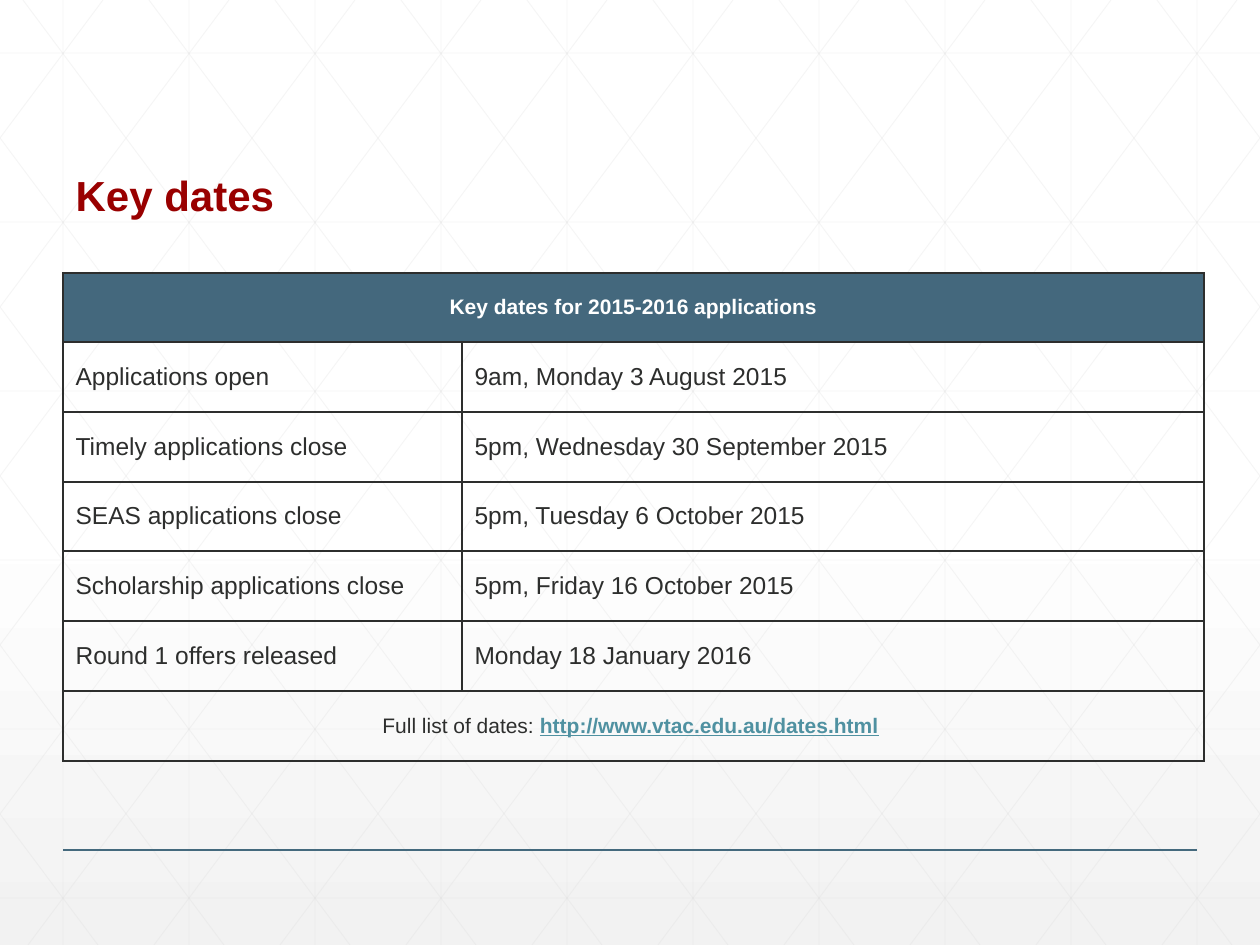
from dataclasses import dataclass

from lxml import etree
from pptx import Presentation
from pptx.dml.color import RGBColor
from pptx.enum.shapes import MSO_CONNECTOR
from pptx.enum.text import MSO_ANCHOR, MSO_AUTO_SIZE, PP_ALIGN
from pptx.oxml.ns import qn
from pptx.util import Emu, Pt

STRAIGHT = MSO_CONNECTOR.STRAIGHT
MIDDLE, BOTTOM = MSO_ANCHOR.MIDDLE, MSO_ANCHOR.BOTTOM
LEFT, CENTER = PP_ALIGN.LEFT, PP_ALIGN.CENTER
NO_FIT = MSO_AUTO_SIZE.NONE

SCALE = 914400 / 126
W, H = 1260, 945
FONT = "Arial"
COLORS = {
    "white": "FFFFFF",
    "fade": "F2F2F2",
    "grid": "D9D9D9",
    "title": "990000",
    "header": "44687D",
    "rule": "44697D",
    "text": "2D2E2D",
    "link": "4F91A1",
}

GRID_STEP, GRID_LEFT, GRID_TOP, GRID_ROW = 126, 63, 53, 169
DIAGONAL_START, DIAGONAL_RUN = 23, 705

TABLE_BOX = (63, 273, 1141, 488)
COL_WIDTHS = (399, 742)
HEADING = "Key dates for 2015-2016 applications"


@dataclass
class KeyDate:
    event: str
    when: str


@dataclass
class Line:
    x1: int
    y1: int
    x2: int
    y2: int


KEY_DATES = [
    KeyDate("Applications open", "9am, Monday 3 August 2015"),
    KeyDate("Timely applications close", "5pm, Wednesday 30 September 2015"),
    KeyDate("SEAS applications close", "5pm, Tuesday 6 October 2015"),
    KeyDate("Scholarship applications close", "5pm, Friday 16 October 2015"),
    KeyDate("Round 1 offers released", "Monday 18 January 2016"),
]


def px(n: int) -> Emu:
    return Emu(round(n * SCALE))


def rgb(name: str) -> RGBColor:
    return RGBColor.from_string(COLORS[name])


def add_text(p, text: str, *, size: int = 14, color: str = "text",
             bold: bool = False, underline: bool = False, align=LEFT) -> None:
    p.alignment = align
    r = p.add_run()
    r.text = text
    r.font.name = FONT
    r.font.size = Pt(size)
    r.font.bold = bold
    r.font.underline = underline
    r.font.color.rgb = rgb(color)


def add_line(s, line: Line, color: str, width: float, alpha: int = 100) -> None:
    sp = s.shapes.add_connector(
        STRAIGHT, px(line.x1), px(line.y1), px(line.x2), px(line.y2))
    sp.line.color.rgb = rgb(color)
    sp.line.width = Pt(width)
    if alpha < 100:
        clr = sp._element.spPr.find(".//" + qn("a:srgbClr"))
        etree.SubElement(clr, qn("a:alpha"), val=str(alpha * 1000))
    etree.SubElement(sp._element.spPr, qn("a:effectLst"))


def grid_lines() -> list[Line]:
    lines = [Line(x, 0, x, H) for x in range(GRID_LEFT, W, GRID_STEP)]
    lines += [Line(0, y, W, y) for y in range(GRID_TOP, H, GRID_ROW)]
    slope = H / DIAGONAL_RUN
    for i in range(-5, 10):
        start = DIAGONAL_START + i * GRID_STEP
        x1, x2 = max(start, 0), min(start + DIAGONAL_RUN, W)
        y1, y2 = (round((x - start) * slope) for x in (x1, x2))
        lines += [Line(x1, y1, x2, y2), Line(W - x1, y1, W - x2, y2)]
    return lines


def set_background(s) -> None:
    fill = s.background.fill
    fill.gradient()
    fill.gradient_angle = 270
    stops = ((0.53, "white"), (1, "fade"))
    for stop, (position, color) in zip(fill.gradient_stops, stops):
        stop.position = position
        stop.color.rgb = rgb(color)


def add_title(s, text: str) -> None:
    sp = s.shapes.title
    sp.left, sp.top, sp.width, sp.height = map(px, (63, 69, 1134, 158))
    tf = sp.text_frame
    tf.auto_size = NO_FIT
    tf.word_wrap = True
    tf.vertical_anchor = BOTTOM
    p = tf.paragraphs[0]
    p.line_spacing = 0.9
    add_text(p, text, size=24, color="title", bold=True)
    s.shapes._spTree.append(sp._element)


def format_cell(cell) -> None:
    cell.vertical_anchor = MIDDLE
    tcPr = cell._tc.get_or_add_tcPr()
    for side in ("a:lnL", "a:lnR", "a:lnT", "a:lnB"):
        ln = etree.SubElement(tcPr, qn(side), w=str(Pt(1)))
        solid = etree.SubElement(ln, qn("a:solidFill"))
        etree.SubElement(solid, qn("a:srgbClr"), val=COLORS["text"])
    cell.fill.background()


def add_dates_table(s) -> None:
    n = len(KEY_DATES) + 2
    table = s.shapes.add_table(n, 2, *map(px, TABLE_BOX)).table
    table.first_row = table.horz_banding = False
    for col, width in zip(table.columns, COL_WIDTHS):
        col.width = px(width)
    height = TABLE_BOX[3]
    for i, row in enumerate(table.rows):
        row.height = px(height * (i + 1) // n - height * i // n)
    for cell in table.iter_cells():
        format_cell(cell)
    for i in (0, n - 1):
        table.cell(i, 0).merge(table.cell(i, 1))

    head = table.cell(0, 0)
    head.fill.solid()
    head.fill.fore_color.rgb = rgb("header")
    add_text(head.text_frame.paragraphs[0], HEADING,
             size=12, color="white", bold=True, align=CENTER)
    for i, item in enumerate(KEY_DATES, 1):
        for j, text in enumerate((item.event, item.when)):
            add_text(table.cell(i, j).text_frame.paragraphs[0], text)
    p = table.cell(n - 1, 0).text_frame.paragraphs[0]
    add_text(p, "Full list of dates: ", size=12, align=CENTER)
    add_text(p, "http://www.vtac.edu.au/dates.html", size=12, color="link",
             bold=True, underline=True, align=CENTER)
    add_text(p, " ", size=12, align=CENTER)


def main() -> None:
    prs = Presentation()
    prs.slide_width, prs.slide_height = px(W), px(H)
    s = prs.slides.add_slide(prs.slide_layouts[5])
    set_background(s)
    for line in grid_lines():
        add_line(s, line, "grid", 0.5, alpha=25)
    add_line(s, Line(63, 850, 1197, 850), "rule", 1)
    add_title(s, "Key dates")
    add_dates_table(s)
    prs.save("out.pptx")


if __name__ == "__main__":
    main()
